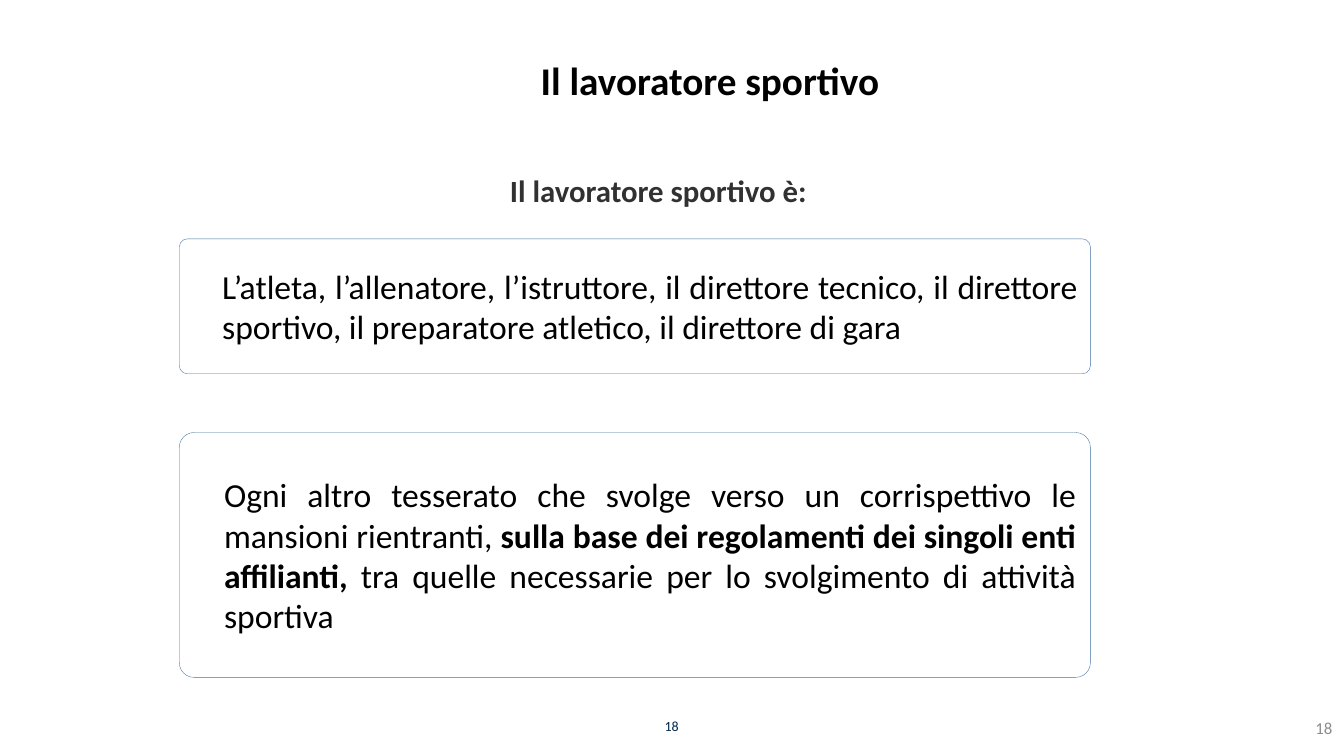
from pptx import Presentation
from pptx.dml.color import RGBColor
from pptx.enum.shapes import MSO_SHAPE
from pptx.enum.text import MSO_ANCHOR, MSO_AUTO_SIZE, PP_ALIGN
from pptx.util import Cm, Pt

ROUNDED = MSO_SHAPE.ROUNDED_RECTANGLE
TOP, MIDDLE, BOTTOM = MSO_ANCHOR.TOP, MSO_ANCHOR.MIDDLE, MSO_ANCHOR.BOTTOM
CENTER, RIGHT, JUSTIFY = PP_ALIGN.CENTER, PP_ALIGN.RIGHT, PP_ALIGN.JUSTIFY
NO_AUTOFIT = MSO_AUTO_SIZE.NONE

BLACK = RGBColor(0x00, 0x00, 0x00)
CHARCOAL = RGBColor(0x31, 0x31, 0x31)
GREY = RGBColor(0x8C, 0x8C, 0x8C)
NAVY = RGBColor(0x00, 0x26, 0x4C)
BORDER_BLUE = RGBColor(0x40, 0x70, 0xA0)

FONT = "Calibri"
TITLE = "Il lavoratore sportivo"
TITLE_BOX = (6.32, 1.42, 23.14, 1.35)
SUBTITLE = "Il lavoratore sportivo è:"
SUBTITLE_BOX = (11.94, 4.32, 9.3, 0.94)
PAGE_NUMBER = "18"
PAGE_NUMBERS = [
    ((31.93, 17.65, 1.9, 1.4), MIDDLE, RIGHT, 12, GREY),
    ((12.9, 17.35, 8.05, 1.27), BOTTOM, CENTER, 10, NAVY),
]
CARD_LEFT, CARD_WIDTH = 4.52, 22.96
CARDS = [
    (6.02, 3.4, [
        ("L’atleta, l’allenatore, l’istruttore, il direttore tecnico, il direttore "
         "sportivo, il preparatore atletico, il direttore di gara", False),
    ]),
    (10.9, 6.17, [
        ("Ogni altro tesserato che svolge verso un corrispettivo le mansioni rientranti, ", False),
        ("sulla base dei regolamenti dei singoli enti affilianti,", True),
        (" tra quelle necessarie per lo svolgimento di attività sportiva", False),
    ]),
]


def write(shape, pieces, size, color, alignment, anchor):
    frame = shape.text_frame
    frame.word_wrap = True
    frame.auto_size = NO_AUTOFIT
    frame.vertical_anchor = anchor
    paragraph = frame.paragraphs[0]
    paragraph.alignment = alignment
    for text, bold in pieces:
        run = paragraph.add_run()
        run.text = text
        run.font.name = FONT
        run.font.size = Pt(size)
        run.font.bold = bold
        run.font.color.rgb = color
    return paragraph


def add_card(slide, top, height, pieces):
    card = slide.shapes.add_shape(
        ROUNDED, Cm(CARD_LEFT), Cm(top), Cm(CARD_WIDTH), Cm(height))
    card.adjustments[0] = 0.06
    card.shadow.inherit = False
    card.fill.background()
    card.line.color.rgb = BORDER_BLUE
    card.line.width = Pt(0.25)
    frame = card.text_frame
    frame.margin_left = Cm(1.02)
    frame.margin_right = frame.margin_top = frame.margin_bottom = Cm(0.25)
    write(card, pieces, 24, BLACK, JUSTIFY, MIDDLE)


def main():
    presentation = Presentation()
    presentation.slide_width = Cm(33.87)
    presentation.slide_height = Cm(19.05)
    slide = presentation.slides.add_slide(presentation.slide_layouts[5])

    title = slide.shapes.title
    title.left, title.top, title.width, title.height = map(Cm, TITLE_BOX)
    write(title, [(TITLE, True)], 28, BLACK, CENTER, MIDDLE).line_spacing = 0.9

    for top, height, pieces in CARDS:
        add_card(slide, top, height, pieces)

    subtitle = slide.shapes.add_textbox(*map(Cm, SUBTITLE_BOX))
    frame = subtitle.text_frame
    frame.margin_left = frame.margin_right = frame.margin_top = frame.margin_bottom = 0
    write(subtitle, [(SUBTITLE, True)], 22, CHARCOAL, CENTER, TOP).space_before = Pt(6)

    for box, anchor, alignment, size, color in PAGE_NUMBERS:
        number = slide.shapes.add_textbox(*map(Cm, box))
        write(number, [(PAGE_NUMBER, False)], size, color, alignment, anchor)

    presentation.save("out.pptx")


if __name__ == "__main__":
    main()
